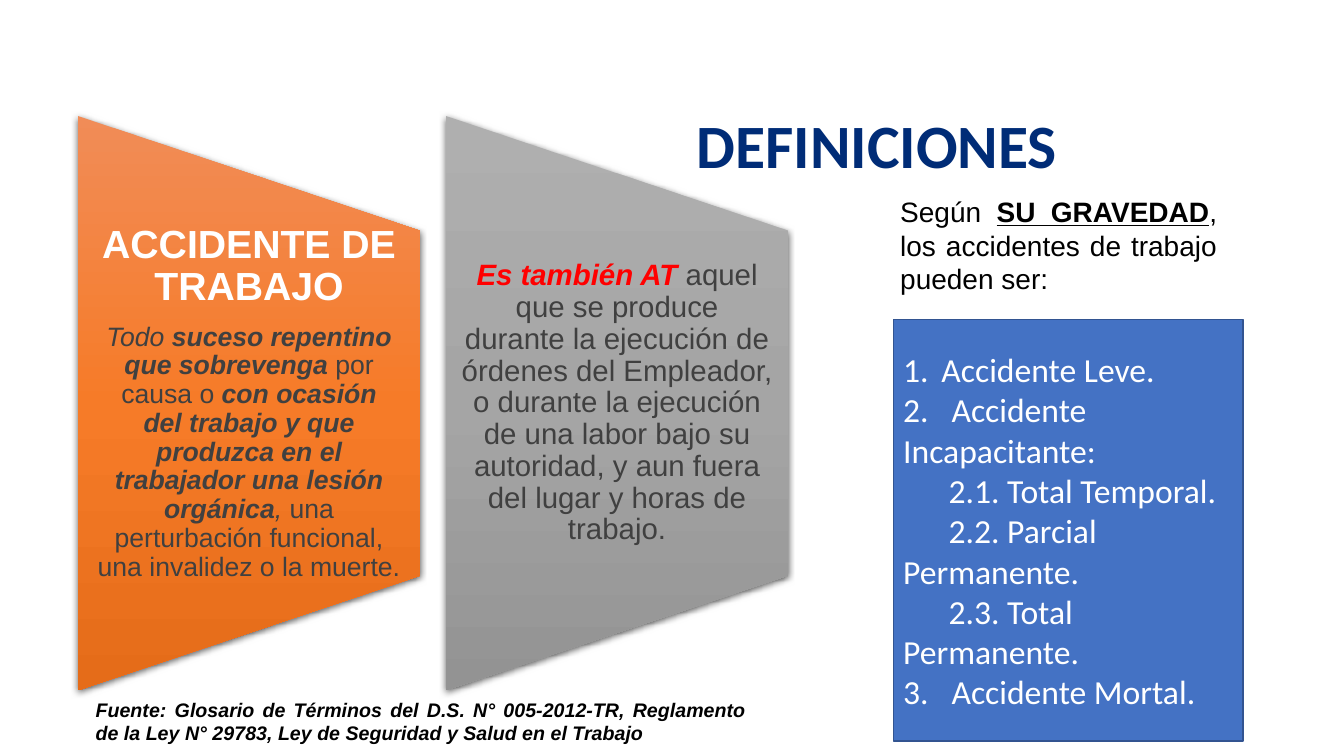
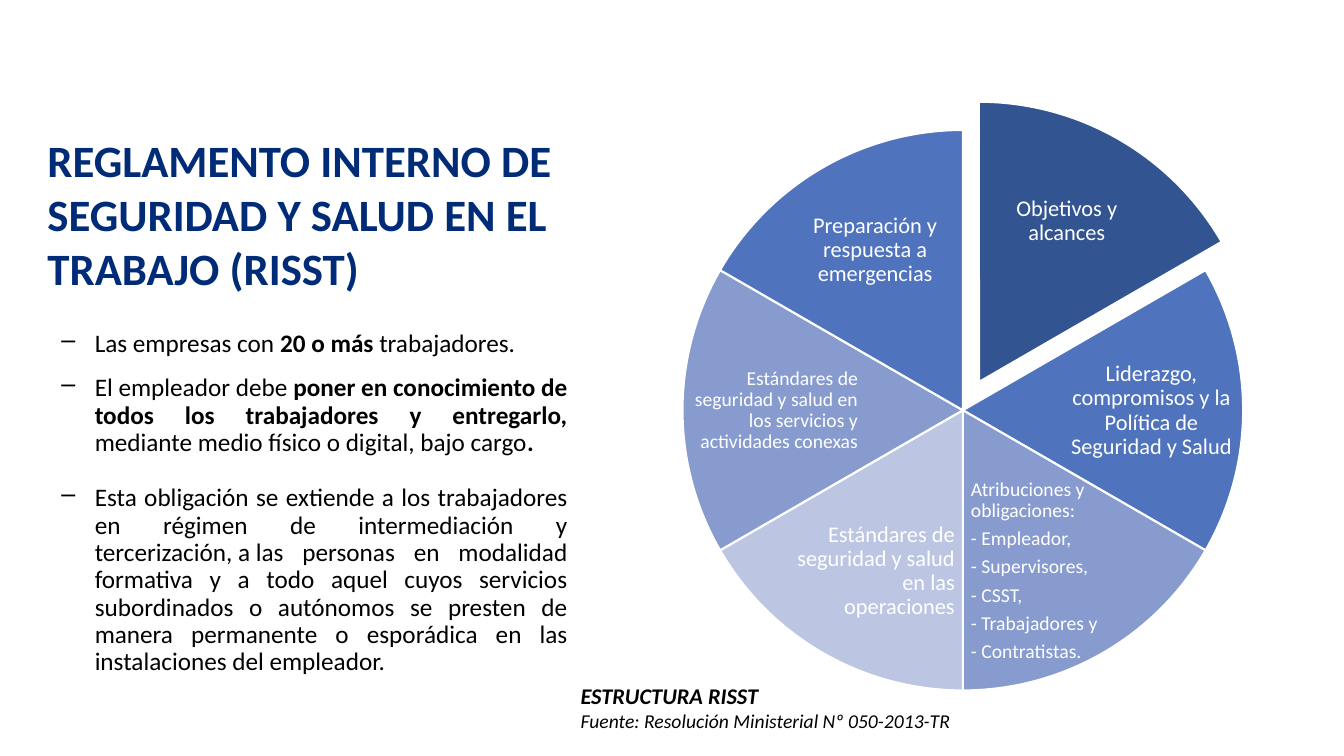
from dataclasses import dataclass

from lxml import etree
from pptx import Presentation
from pptx import util as u
from pptx.dml.color import RGBColor
from pptx.enum import shapes, text
from pptx.oxml.ns import qn

PX = 9144  # EMU in one px: 100 px to the inch
KIND = shapes.MSO_SHAPE
ALIGN = text.PP_ALIGN
ANCHOR = text.MSO_ANCHOR


@dataclass(frozen=True)
class Theme:
    sans: str = "Arial"
    body: str = "Calibri"
    navy: str = "002C77"
    blue: str = "4472C4"
    deep: str = "325491"
    mid: str = "4F73BD"
    soft: str = "879BCE"
    pale: str = "BCC6E2"
    white: str = "FFFFFF"
    black: str = "000000"
    dark: str = "404040"
    red: str = "FF0000"
    orange: tuple = ("F18C57", "F67B28", "E56C19")
    grey: tuple = ("AFAFAF", "A5A5A5", "939393")
    head: int = 44
    sub: int = 32
    lead: int = 28
    list: int = 24
    large: int = 21
    intro: int = 20
    card: int = 19
    main: int = 18
    label: int = 16
    small: int = 14


T = Theme()


def px(*vals):
    return [u.Emu(round(v * PX)) for v in vals]


def rgb(code):
    return RGBColor.from_string(code)


# Text: a paragraph is a string or a list of (words, flags, colour) runs
def add_run(par, words, flags="", color=None):
    for i, piece in enumerate(words.split("\n")):
        if i:
            par.add_line_break()
        run = par.add_run()
        run.text = piece
        if "b" in flags:
            run.font.bold = True
        if "i" in flags:
            run.font.italic = True
        if "u" in flags:
            run.font.underline = True
        if color:
            run.font.color.rgb = rgb(color)


def style(par, size, color=T.black, font=T.body, flags="", align=ALIGN.LEFT):
    par.alignment = align
    face = par.font
    face.name, face.size = font, u.Pt(size)
    face.color.rgb = rgb(color)
    face.bold, face.italic = "b" in flags, "i" in flags


def write(frame, pars):
    made = []
    for i, runs in enumerate(pars):
        par = frame.add_paragraph() if i else frame.paragraphs[0]
        for run in [(runs,)] if isinstance(runs, str) else runs:
            add_run(par, *run)
        made.append(par)
    return made


def add_text(slide, box, pars, inset=(10, 5), anchor=ANCHOR.TOP):
    frame = slide.shapes.add_textbox(*px(*box)).text_frame
    frame.word_wrap = True
    frame.vertical_anchor = anchor
    frame.margin_left = frame.margin_right = px(inset[0])[0]
    frame.margin_top = frame.margin_bottom = px(inset[1])[0]
    return write(frame, pars)


def tighten(par, size):
    par.line_spacing = 0.9
    par.space_after = u.Pt(round(size * 0.35))


def indent(par, left, first):
    props = par._p.get_or_add_pPr()
    props.set("marL", str(left * PX))
    props.set("indent", str(first * PX))
    return props


def set_tab(par, pos):
    tabs = etree.SubElement(par._p.get_or_add_pPr(), qn("a:tabLst"))
    etree.SubElement(tabs, qn("a:tab"), pos=str(pos * PX), algn="l")


def set_title(slide, box, words, size, align=ALIGN.LEFT):
    title = slide.shapes.title
    title.left, title.top, title.width, title.height = px(*box)
    frame = title.text_frame
    frame.word_wrap = True
    frame.auto_size = text.MSO_AUTO_SIZE.NONE
    frame.vertical_anchor = ANCHOR.TOP
    style(write(frame, [words])[0], size, T.navy, flags="b", align=align)


# Shapes
def add_shape(slide, kind, box, fill=None, line=None, width=1):
    shape = slide.shapes.add_shape(kind, *px(*box))
    shape.shadow.inherit = False
    if fill:
        shape.fill.solid()
        shape.fill.fore_color.rgb = rgb(fill)
    if line:
        shape.line.color.rgb = rgb(line)
        shape.line.width = u.Pt(width)
    else:
        shape.line.fill.background()
    return shape


def shade(shape, colors):
    """Vertical gradient that ignores the turn of the shape."""
    shape.fill.gradient()
    grad = shape._element.spPr.find(qn("a:gradFill"))
    grad.set("rotWithShape", "0")
    stops = grad.find(qn("a:gsLst"))
    for old in list(stops):
        stops.remove(old)
    for i, code in enumerate(colors):
        stop = etree.SubElement(stops, qn("a:gs"), pos=str(i * 50000))
        etree.SubElement(stop, qn("a:srgbClr"), val=code)
    grad.find(qn("a:lin")).set("ang", "5400000")


def drop_shadow(shape):
    effects = shape._element.spPr.find(qn("a:effectLst"))
    cast = etree.SubElement(effects, qn("a:outerShdw"), blurRad="57150",
                            dist="19050", dir="5400000", algn="ctr",
                            rotWithShape="0")
    color = etree.SubElement(cast, qn("a:srgbClr"), val=T.black)
    etree.SubElement(color, qn("a:alpha"), val="63000")


# Slide 1 regions
def add_panel(slide, box, colors, pars, sizes, tones, inset):
    x, y, w, h = box
    turned = (x + (w - h) / 2, y + (h - w) / 2, h, w)
    shape = add_shape(slide, KIND.FLOWCHART_MANUAL_OPERATION, turned)
    shape.rotation = 270
    shade(shape, colors)
    drop_shadow(shape)
    made = add_text(slide, (x, y + h // 5, w, h * 3 // 5), pars,
                    (inset, 0), ANCHOR.MIDDLE)
    for par, size, tone in zip(made, sizes, tones):
        tighten(par, size)
        style(par, size, tone, T.sans, align=ALIGN.CENTER)


def add_kinds(slide, box):
    shape = add_shape(slide, KIND.RECTANGLE, box, T.blue, T.deep)
    frame = shape.text_frame
    frame.word_wrap = True
    frame.vertical_anchor = ANCHOR.MIDDLE
    rows = [("1.\tAccidente Leve.", 38),
            ("2.\tAccidente Incapacitante:", 48),
            ("2.1. Total Temporal.", None),
            ("2.2. Parcial Permanente.", None),
            ("2.3. Total Permanente.", None),
            ("3.\tAccidente Mortal.", 48)]
    for par, (_, tab) in zip(write(frame, [row[0] for row in rows]), rows):
        if tab:
            set_tab(par, tab)
        else:
            indent(par, 0, 45)
        style(par, T.list, T.white)


def build_terms(slide):
    set_title(slide, (332, 101, 727, 84), "DEFINICIONES", T.head, ALIGN.RIGHT)
    accident = [
        [("ACCIDENTE DE TRABAJO", "b")],
        [("Todo ", "i"), ("suceso repentino que sobrevenga ", "bi"),
         ("por causa o ",),
         ("con ocasión\ndel trabajo y que produzca en el trabajador "
          "una lesión orgánica", "bi"), (",", "i"),
         (" una perturbación funcional, una invalidez o la muerte.",)]]
    also = [[("Es también AT ", "bi", T.red),
             ("aquel que se produce\ndurante la ejecución de órdenes del "
              "Empleador, o durante la ejecución de una labor bajo su "
              "autoridad, y aun fuera del lugar y horas de trabajo.",)]]
    add_panel(slide, (77, 115, 340, 570), T.orange, accident,
              (T.lead, T.card), (T.white, T.dark), 19)
    add_panel(slide, (442, 115, 340, 570), T.grey, also,
              (T.large,), (T.dark,), 15)
    add_kinds(slide, (886, 317, 347, 418))
    source = add_text(slide, (85, 687, 665, 57), [
        "Fuente: Glosario de Términos del D.S. N° 005-2012-TR, Reglamento "
        "de la Ley N° 29783, Ley de Seguridad y Salud en el Trabajo"])
    style(source[0], T.small, font=T.sans, flags="bi", align=ALIGN.JUSTIFY)
    intro = add_text(slide, (883, 188, 334, 111), [
        [("Según ",), ("SU GRAVEDAD", "bu"),
         (", los accidentes de trabajo pueden ser:",)]])
    style(intro[0], T.intro, font=T.sans, align=ALIGN.JUSTIFY)


# Slide 2 regions
def add_duties(slide, box):
    joined = chr(160).join(("tercerización,", "a", "las"))
    pars = [
        [("Las empresas con ",), ("20 o más ", "b"), ("trabajadores.",)],
        [("El empleador debe ",),
         ("poner en conocimiento de todos los trabajadores y entregarlo, ",
          "b"),
         ("mediante medio físico o digital, bajo cargo",), (".", "b")],
        "Esta obligación se extiende a los trabajadores en régimen de "
        f"intermediación y {joined} personas en modalidad formativa y a "
        "todo aquel cuyos servicios subordinados o autónomos se presten de "
        "manera permanente o esporádica en las instalaciones del empleador."]
    for par, gap in zip(add_text(slide, box, pars, (0, 0)), (0, 12, 20)):
        props = indent(par, 33, -33)
        etree.SubElement(props, qn("a:buChar"), char="–")
        par.line_spacing = u.Pt(19.5)
        par.space_before = u.Pt(gap)
        style(par, T.main, align=ALIGN.JUSTIFY)


def add_wheel(slide, x, y, size):
    wide, tall = (162, 119), (168, 113)
    mid, left, right = ALIGN.CENTER, ALIGN.LEFT, ALIGN.RIGHT
    # fill, shift of the wedge, label offset, label size, align, type, words
    wedges = [
        (T.deep, (16, -28), (300, 31), wide, mid, T.label,
         ["Objetivos y alcances"]),
        (T.mid, (0, 0), (381, 222), tall, mid, T.label,
         ["Liderazgo, compromisos y la Política de Seguridad y Salud"]),
        (T.soft, (0, 0), (284, 378), wide, left, T.small,
         ["Atribuciones y obligaciones:", "- Empleador,", "- Supervisores,",
          "- CSST,", "- Trabajadores y", "- Contratistas."]),
        (T.pale, (0, 0), (110, 378), wide, right, T.label,
         ["Estándares de seguridad y salud en las operaciones"]),
        (T.soft, (0, 0), (8, 222), tall, right, T.small,
         ["Estándares de seguridad y salud en los servicios y "
          "actividades conexas"]),
        (T.mid, (0, 0), (110, 60), wide, mid, T.label,
         ["Preparación y respuesta a emergencias"])]
    full, top = 216, 162  # whole turn and twelve o'clock in adjust units
    step = full // len(wedges)
    for i, (fill, shift, spot, area, align, pts, words) in enumerate(wedges):
        wedge = add_shape(slide, KIND.PIE,
                          (x + shift[0], y + shift[1], size, size),
                          fill, T.white, 1.5)
        for side in (0, 1):
            wedge.adjustments[side] = (top + step * (i + side)) % full
        box = (x + spot[0], y + spot[1], *area)
        for par in add_text(slide, box, words, (2, 2), ANCHOR.MIDDLE):
            tighten(par, pts)
            style(par, pts, T.white, align=align)


def build_rules(slide):
    set_title(slide, (37, 127, 640, 172),
              "REGLAMENTO INTERNO DE SEGURIDAD Y SALUD EN EL TRABAJO (RISST)",
              T.sub)
    add_wheel(slide, 677, 129, 556)
    add_duties(slide, (61, 328, 502, 340))
    name, source = add_text(slide, (566, 672, 467, 61), [
        "ESTRUCTURA RISST", "Fuente: Resolución Ministerial Nº 050-2013-TR"])
    style(name, T.label, flags="bi")
    style(source, T.small, flags="i")


def main():
    deck = Presentation()
    deck.slide_width, deck.slide_height = px(1333, 750)
    for build in (build_terms, build_rules):
        build(deck.slides.add_slide(deck.slide_layouts[5]))
    deck.save("out.pptx")


if __name__ == "__main__":
    main()
